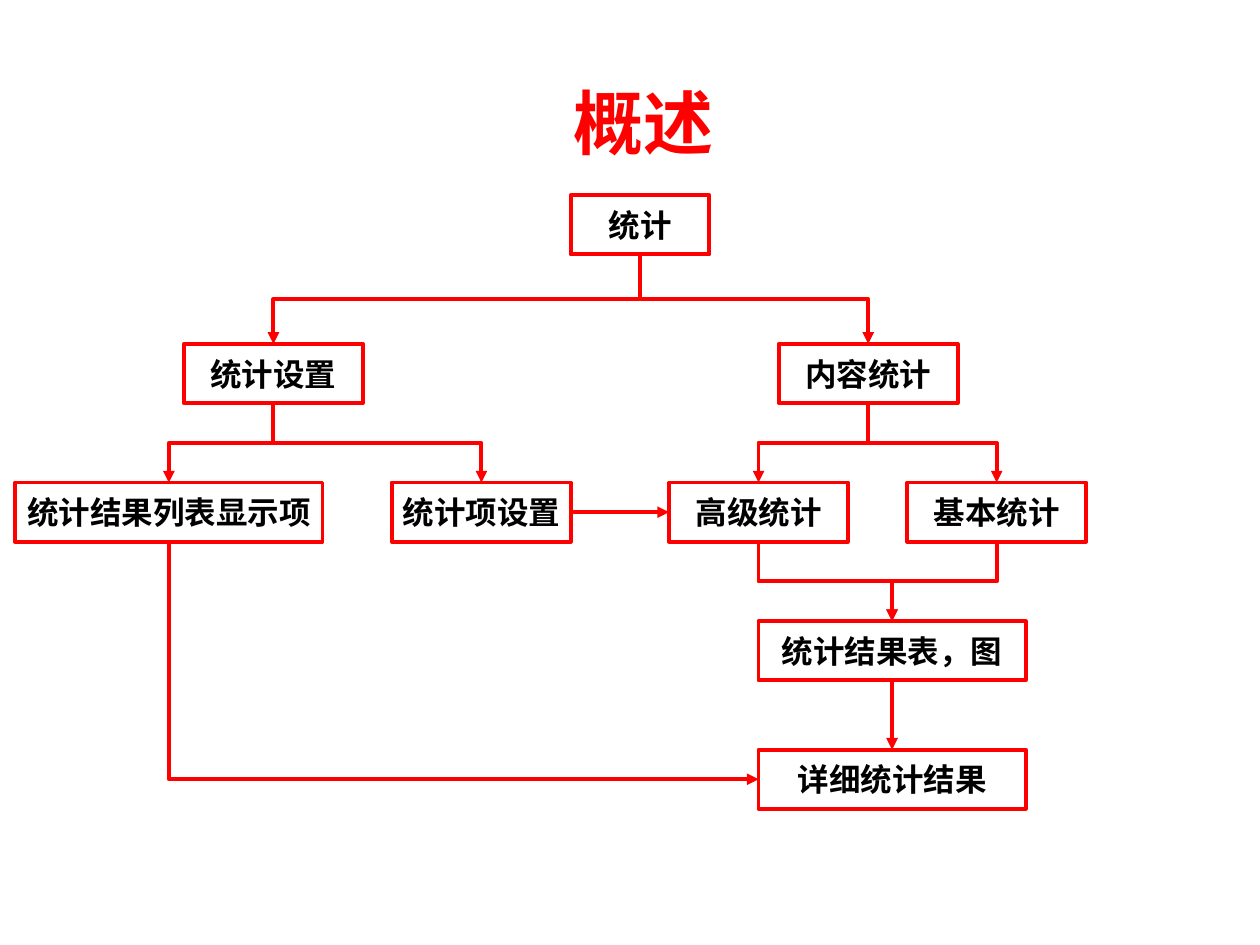
from dataclasses import dataclass

from lxml import etree
from pptx import Presentation
from pptx.dml.color import RGBColor
from pptx.enum.shapes import MSO_CONNECTOR, MSO_SHAPE
from pptx.enum.text import MSO_ANCHOR, PP_ALIGN
from pptx.oxml.ns import qn
from pptx.shapes.autoshape import Shape
from pptx.shapes.connector import Connector
from pptx.slide import Slide
from pptx.util import Inches, Pt

RECTANGLE = MSO_SHAPE.RECTANGLE
STRAIGHT, ELBOW = MSO_CONNECTOR.STRAIGHT, MSO_CONNECTOR.ELBOW
MIDDLE, BOTTOM_ANCHOR = MSO_ANCHOR.MIDDLE, MSO_ANCHOR.BOTTOM
CENTER = PP_ALIGN.CENTER
TOP, LEFT, BOTTOM, RIGHT = range(4)
RED, BLACK = "FF0000", "000000"
LINE_WIDTH = Pt(2.25)
BOX_HEIGHT = 0.47
ROW_1, ROW_2, ROW_3, ROW_4, ROW_5 = 1.55, 2.73, 3.83, 4.93, 5.95
TITLE_FORMAT = {"name": "Roboto", "size": Pt(40), "bold": True}
BOX_FORMAT = {"name": "Roboto", "size": Pt(18), "bold": True}


@dataclass
class Box:
    text: str
    left: float
    top: float
    width: float = 1.42


@dataclass
class Link:
    source: str
    target: str
    source_side: int = BOTTOM
    target_side: int = TOP
    preset: str = "bentConnector3"


BOXES = [
    Box("统计", 4.53, ROW_1, 1.1),
    Box("统计设置", 1.46, ROW_2),
    Box("内容统计", 6.18, ROW_2),
    Box("统计结果列表显示项", 0.12, ROW_3, 2.44),
    Box("统计项设置", 3.11, ROW_3),
    Box("高级统计", 5.31, ROW_3),
    Box("基本统计", 7.2, ROW_3),
    Box("统计结果表，图", 6.02, ROW_4, 2.12),
    Box("详细统计结果", 6.02, ROW_5, 2.12),
]

LINKS = [
    Link("统计", "统计设置"),
    Link("统计", "内容统计"),
    Link("统计设置", "统计项设置"),
    Link("统计设置", "统计结果列表显示项"),
    Link("内容统计", "高级统计"),
    Link("内容统计", "基本统计"),
    Link("高级统计", "统计结果表，图"),
    Link("基本统计", "统计结果表，图"),
    Link("统计结果表，图", "详细统计结果", preset="line"),
    Link("统计项设置", "高级统计", RIGHT, LEFT, "line"),
    Link("统计结果列表显示项", "详细统计结果", BOTTOM, LEFT, "bentConnector2"),
]


def color(value: str) -> RGBColor:
    return RGBColor.from_string(value)


def write_text(shape: Shape, text: str, text_format: dict, text_color: str,
               anchor: MSO_ANCHOR, wrap: bool) -> None:
    frame = shape.text_frame
    frame.word_wrap = wrap
    frame.vertical_anchor = anchor
    paragraph = frame.paragraphs[0]
    paragraph.alignment = CENTER
    run = paragraph.add_run()
    run.text = text
    for name, value in text_format.items():
        setattr(run.font, name, value)
    run.font.color.rgb = color(text_color)


def style_line(shape: Shape | Connector) -> None:
    shape.line.color.rgb = color(RED)
    shape.line.width = LINE_WIDTH


def draw_box(slide: Slide, box: Box) -> Shape:
    shape = slide.shapes.add_shape(
        RECTANGLE, Inches(box.left), Inches(box.top), Inches(box.width), Inches(BOX_HEIGHT))
    shape.shadow.inherit = False
    shape.fill.background()
    style_line(shape)
    write_text(shape, box.text, BOX_FORMAT, BLACK, MIDDLE, False)
    return shape


def leave_downwards(connector: Connector, preset: str) -> None:
    begin_x, begin_y = connector.begin_x, connector.begin_y
    end_x, end_y = connector.end_x, connector.end_y
    width, height = abs(end_y - begin_y), abs(end_x - begin_x)
    properties = connector._element.spPr
    transform = properties.find(qn("a:xfrm"))
    transform.attrib.clear()
    if end_x > begin_x:
        transform.set("rot", str(270 * 60000))
        transform.set("flipH", "1")
    else:
        transform.set("rot", str(90 * 60000))
    connector.left = (begin_x + end_x - width) // 2
    connector.top = (begin_y + end_y - height) // 2
    connector.width, connector.height = width, height
    properties.find(qn("a:prstGeom")).set("prst", preset)


def draw_link(slide: Slide, link: Link, shapes: dict[str, Shape]) -> None:
    straight = link.preset == "line"
    connector = slide.shapes.add_connector(STRAIGHT if straight else ELBOW, 0, 0, 0, 0)
    connector.begin_connect(shapes[link.source], link.source_side)
    connector.end_connect(shapes[link.target], link.target_side)
    if not straight:
        leave_downwards(connector, link.preset)
    style_line(connector)
    etree.SubElement(connector.line._get_or_add_ln(), qn("a:tailEnd"), type="triangle")
    etree.SubElement(connector._element.spPr, qn("a:effectLst"))


def main() -> None:
    presentation = Presentation()
    presentation.slide_width, presentation.slide_height = Inches(10), Inches(7.5)
    slide = presentation.slides.add_slide(presentation.slide_layouts[6])
    title = slide.shapes.add_textbox(Inches(0.83), Inches(0.52), Inches(8.55), Inches(0.83))
    write_text(title, "概述", TITLE_FORMAT, RED, BOTTOM_ANCHOR, True)
    shapes = {box.text: draw_box(slide, box) for box in BOXES}
    for link in LINKS:
        draw_link(slide, link, shapes)
    presentation.save("out.pptx")


if __name__ == "__main__":
    main()
